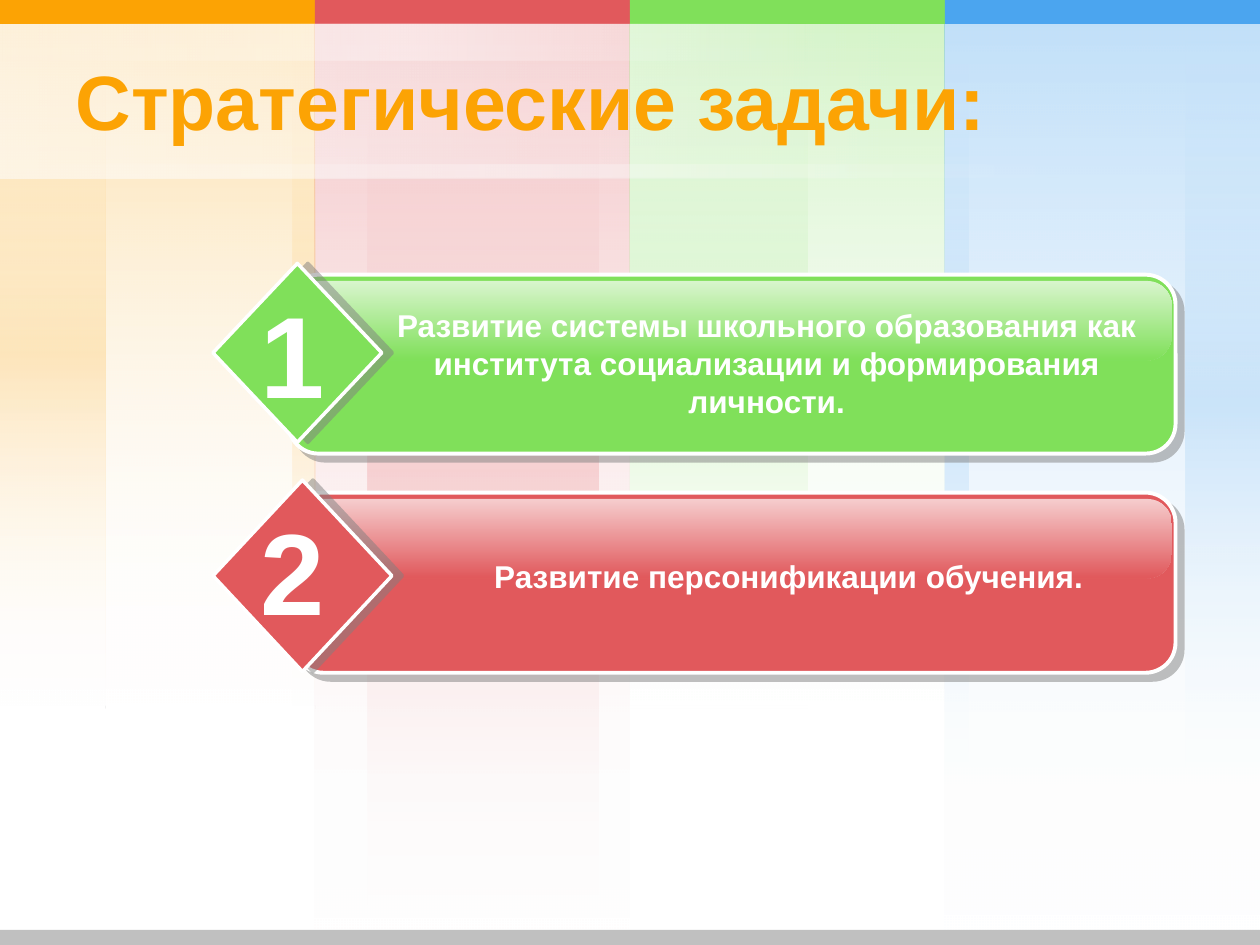
from lxml import etree
from pptx import Presentation
from pptx.dml.color import RGBColor
from pptx.enum.shapes import MSO_SHAPE as SHAPE
from pptx.enum.text import MSO_ANCHOR, MSO_AUTO_SIZE as FIT, PP_ALIGN
from pptx.oxml import parse_xml
from pptx.oxml.ns import nsdecls, qn
from pptx.util import Inches, Pt

ORANGE = RGBColor(0xFC, 0xA3, 0x04)
RED = RGBColor(0xE1, 0x59, 0x5C)
GREEN = RGBColor(0x80, 0xE0, 0x5A)
BLUE = RGBColor(0x4B, 0xA5, 0xEF)
WHITE = RGBColor(0xFF, 0xFF, 0xFF)
SILVER = RGBColor(0xC0, 0xC0, 0xC0)
GRAY = RGBColor(0x80, 0x80, 0x80)
BLACK = RGBColor(0, 0, 0)


def effects(color, opacity, dist, angle):
    return parse_xml(
        f'<a:effectLst {nsdecls("a")}><a:outerShdw blurRad="0" dist="{Pt(dist)}" '
        f'dir="{angle * 60000}" algn="ctr" rotWithShape="0"><a:srgbClr val="{color}">'
        f'<a:alpha val="{opacity * 1000}"/></a:srgbClr></a:outerShdw></a:effectLst>')


class Deck:
    font = "Arial"

    def __init__(self):
        self.prs = Presentation()
        self.prs.slide_width, self.prs.slide_height = Inches(10), Inches(7.5)
        self.s = self.prs.slides.add_slide(self.prs.slide_layouts[5])

    def shape(self, box, fill=None, kind=SHAPE.RECTANGLE, adj=None,
              line=None, shadow=None, rotation=0):
        sp = self.s.shapes.add_shape(kind, *map(Inches, box))
        sp.rotation = rotation
        if adj is not None:
            sp.adjustments[0] = adj
        if fill is not None:
            sp.fill.solid()
            sp.fill.fore_color.rgb = fill
        if line:
            sp.line.color.rgb = WHITE
            sp.line.width = Pt(line)
        else:
            sp.line.fill.background()
        sp.shadow.inherit = False
        if shadow:
            empty = sp.element.spPr.find(qn("a:effectLst"))
            empty.getparent().replace(empty, effects(GRAY, 50, *shadow))
        return sp

    def fade(self, box, stops, **options):
        sp = self.shape(box, **options)
        sp.fill.gradient()
        grad = sp.element.spPr.find(qn("a:gradFill"))
        grad.set("rotWithShape", "1")
        for child in list(grad):
            grad.remove(child)
        gs_list = etree.SubElement(grad, qn("a:gsLst"))
        for pos, color, opacity in stops:
            gs = etree.SubElement(gs_list, qn("a:gs"), pos=str(pos * 1000))
            clr = etree.SubElement(gs, qn("a:srgbClr"), val=str(color))
            etree.SubElement(clr, qn("a:alpha"), val=str(opacity * 1000))
        etree.SubElement(grad, qn("a:lin"), ang="5400000", scaled="1")

    def wash(self, box, color, opacity, **options):
        self.fade(box, [(0, color, opacity), (100, WHITE, 0)], **options)

    def band(self, box, color, opacity, **options):
        self.fade(box, [(0, WHITE, 0), (50, color, opacity), (100, WHITE, 0)], **options)

    def style_text(self, tf, text, size, color, align):
        p = tf.paragraphs[0]
        r = p.add_run()
        r.text = text
        p.alignment = align
        p.font.name = self.font
        p.font.size = Pt(size)
        p.font.bold = True
        p.font.color.rgb = color
        return r

    def text(self, box, text, size, wrap=True, shadow=False):
        tf = self.s.shapes.add_textbox(*map(Inches, box)).text_frame
        tf.word_wrap = wrap
        tf.auto_size = FIT.SHAPE_TO_FIT_TEXT
        r = self.style_text(tf, text, size, WHITE, PP_ALIGN.CENTER)
        if shadow:
            r.font.color.rgb = WHITE
            fill = r.font._element.find(qn("a:solidFill"))
            fill.addnext(effects(BLACK, 50, 2, 45))

    def title(self, box, text):
        sp = self.s.shapes.title
        sp.left, sp.top, sp.width, sp.height = map(Inches, box)
        tf = sp.text_frame
        tf.word_wrap = True
        tf.auto_size = FIT.NONE
        tf.vertical_anchor = MSO_ANCHOR.MIDDLE
        self.style_text(tf, text, 44, ORANGE, PP_ALIGN.LEFT)
        sp.element.getparent().append(sp.element)

    def task(self, number, text, color, panel, diamond, text_box):
        left, top, width, _ = panel
        self.shape(panel, color, SHAPE.ROUNDED_RECTANGLE, 0.167, 2.25, (5.7, 45))
        self.fade((left + 0.05, top + 0.05, width - 0.08, 0.63),
                  [(0, WHITE, 70), (100, color, 70)],
                  kind=SHAPE.ROUNDED_RECTANGLE, adj=0.315)
        self.text(text_box, text, 18, shadow=True)
        self.shape(diamond, color, SHAPE.DIAMOND, line=2, shadow=(6, 0))
        self.text((1.96, diamond[1] + 0.11, 0.72, 1.21), number, 66, wrap=False)


def main():
    deck = Deck()
    columns = [
        (RED, 2.5, 7.5, 7.5, [(2.92, 1.83)]),
        (GREEN, 5, 5.62, 5.62, [(5, 1.41)]),
        (BLUE, 7.5, 7.47, 6.37, [(7.5, 0.19), (9.41, 0.59)]),
        (ORANGE, 0, 5.62, 5.62, [(2.32, 0.18), (0, 0.84)]),
    ]
    for color, left, height, band_height, bands in columns:
        deck.wash((left, 0, 2.5, height), color, 20)
        for x, width in bands:
            deck.band((x, 0, width, band_height), color, 20)
        deck.wash((left, 0, 2.5, height), color, 20)
    for i, color in enumerate((ORANGE, RED, GREEN, BLUE)):
        deck.shape((2.5 * i, 0, 2.5, 0.19), color)

    glow = (3.15, -2.95, 1.22, 7.51)
    deck.band((4.16, -2.85, 0.1, 8.42), WHITE, 35, rotation=270)
    deck.wash(glow, WHITE, 35, rotation=270)
    deck.band((3.06, -2.87, 0.29, 6.41), WHITE, 35, rotation=270)
    deck.wash(glow, WHITE, 35, rotation=270)
    deck.shape((0, 7.38, 10, 0.12), SILVER)

    deck.title((0.5, 0.28, 8, 1.03), "Стратегические задачи:")
    deck.task("2", "Развитие персонификации обучения.", RED,
              (2.33, 3.91, 7, 1.43), (1.69, 3.81, 1.42, 1.52), (3, 4.37, 6.52, 0.4))
    deck.task("1", "Развитие системы школьного образования как института "
              "социализации и формирования личности.", GREEN,
              (2.29, 2.18, 7.04, 1.42), (1.69, 2.09, 1.34, 1.42), (2.87, 2.38, 6.43, 1.01))
    deck.prs.save("out.pptx")


if __name__ == "__main__":
    main()
